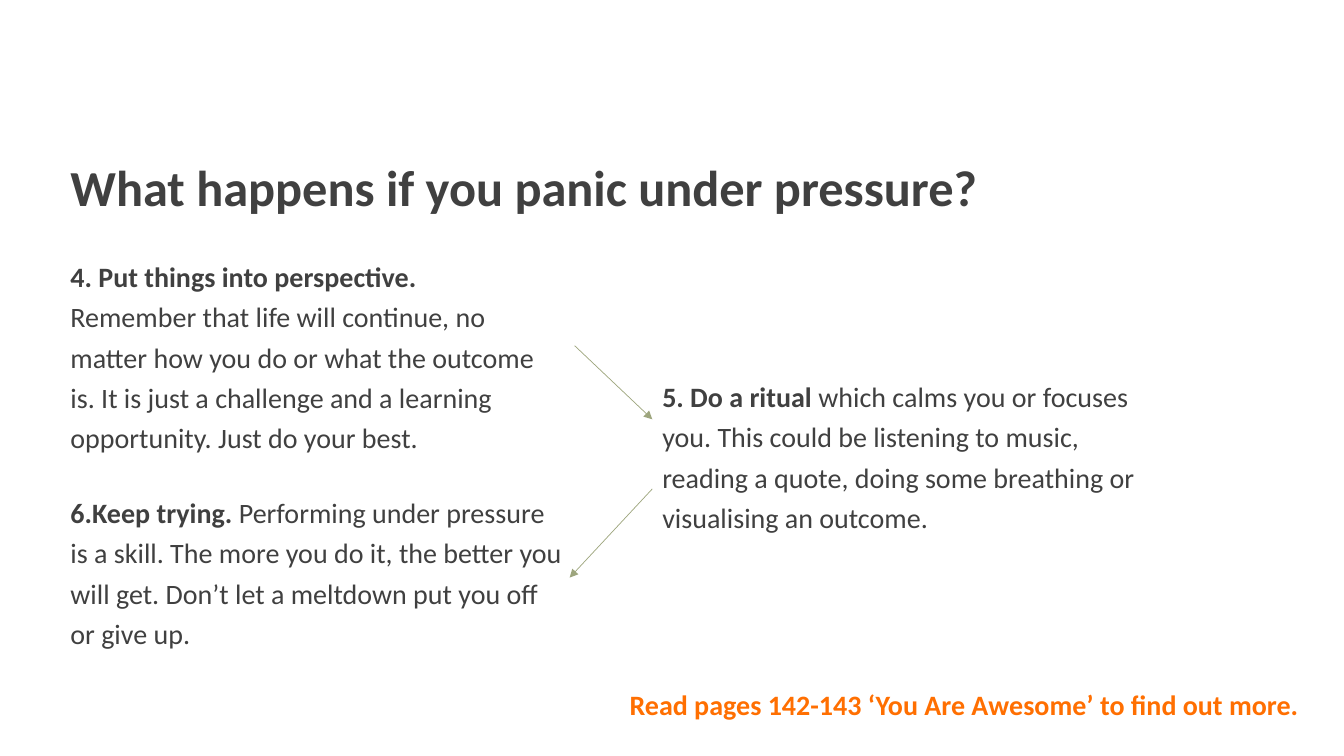
from lxml import etree
from pptx import Presentation
from pptx.dml.color import RGBColor
from pptx.enum.shapes import MSO_CONNECTOR
from pptx.enum.text import MSO_AUTO_SIZE, PP_ALIGN
from pptx.oxml.ns import qn
from pptx.util import Pt

PX = 9144  # EMU per px, 100 px to the inch
SLIDE_WIDTH, SLIDE_HEIGHT = 1333, 750
LEFT_COLUMN, RIGHT_COLUMN = 60, 647
STEP_WIDTH = 509

DARK_GREY = RGBColor(0x40, 0x40, 0x40)
ORANGE = RGBColor(0xFF, 0x6F, 0x01)
SAGE = RGBColor(0x9D, 0xA5, 0x7D)

STRAIGHT = MSO_CONNECTOR.STRAIGHT
FIT_SHAPE = MSO_AUTO_SIZE.SHAPE_TO_FIT_TEXT
RIGHT = PP_ALIGN.RIGHT


class SlideBuilder:
    font_name = "Calibri"
    body_size = 20
    title_size = 36
    step_spacing = 1.2

    def __init__(self, slide):
        self.slide = slide

    def text_frame(self, left, top, width, height):
        box = self.slide.shapes.add_textbox(left * PX, top * PX, width * PX, height * PX)
        frame = box.text_frame
        frame.word_wrap = True
        frame.auto_size = FIT_SHAPE
        return frame

    def style(self, paragraph, size, color):
        paragraph.font.name = self.font_name
        paragraph.font.size = Pt(size)
        paragraph.font.color.rgb = color

    def bold_line(self, text, left, top, width, height, size, color, alignment=None):
        paragraph = self.text_frame(left, top, width, height).paragraphs[0]
        paragraph.text = text
        paragraph.alignment = alignment
        self.style(paragraph, size, color)
        paragraph.font.bold = True

    def step(self, heading, body, left, top, height, own_line=False):
        """Add a bold heading and its text, which follows on unless own_line is set."""
        frame = self.text_frame(left, top, STEP_WIDTH, height)
        paragraph = frame.paragraphs[0]
        heading_run = paragraph.add_run()
        heading_run.text = heading
        heading_run.font.bold = True
        if own_line:
            paragraph = frame.add_paragraph()
        paragraph.add_run().text = body
        for paragraph in frame.paragraphs:
            paragraph.line_spacing = self.step_spacing
            self.style(paragraph, self.body_size, DARK_GREY)

    def arrow(self, start, end):
        points = [value * PX for value in (*start, *end)]
        connector = self.slide.shapes.add_connector(STRAIGHT, *points)
        connector.line.color.rgb = SAGE
        connector.line.width = Pt(0.5)
        line = connector.line._get_or_add_ln()
        etree.SubElement(line, qn("a:tailEnd"), type="triangle")
        etree.SubElement(connector._element.spPr, qn("a:effectLst"))


def main():
    presentation = Presentation()
    presentation.slide_width = SLIDE_WIDTH * PX
    presentation.slide_height = SLIDE_HEIGHT * PX
    builder = SlideBuilder(presentation.slides.add_slide(presentation.slide_layouts[6]))

    builder.bold_line("What happens if you panic under pressure?",
                      LEFT_COLUMN, 150, 1083, 71, builder.title_size, DARK_GREY)
    builder.step("4. Put things into perspective.",
                 "Remember that life will continue, no matter how you do or what the outcome is. "
                 "It is just a challenge and a learning opportunity. Just do your best.",
                 LEFT_COLUMN, 246, 209, own_line=True)
    builder.step("5. Do a ritual ",
                 "which calms you or focuses you. This could be listening to music, "
                 "reading a quote, doing some breathing or visualising an outcome.",
                 RIGHT_COLUMN, 365, 169)
    builder.step("6.Keep trying. ",
                 "Performing under pressure is a skill. The more you do it, the better you "
                 "will get. Don’t let a meltdown put you off or give up.",
                 LEFT_COLUMN, 480, 169)
    builder.arrow((570, 343), (RIGHT_COLUMN, 416))
    builder.arrow((RIGHT_COLUMN, 485), (565, 573))
    builder.bold_line("Read pages 142-143 ‘You Are Awesome’ to find out more.",
                      167, 677, 1131, 44, builder.body_size, ORANGE, RIGHT)

    presentation.save("out.pptx")


if __name__ == "__main__":
    main()
